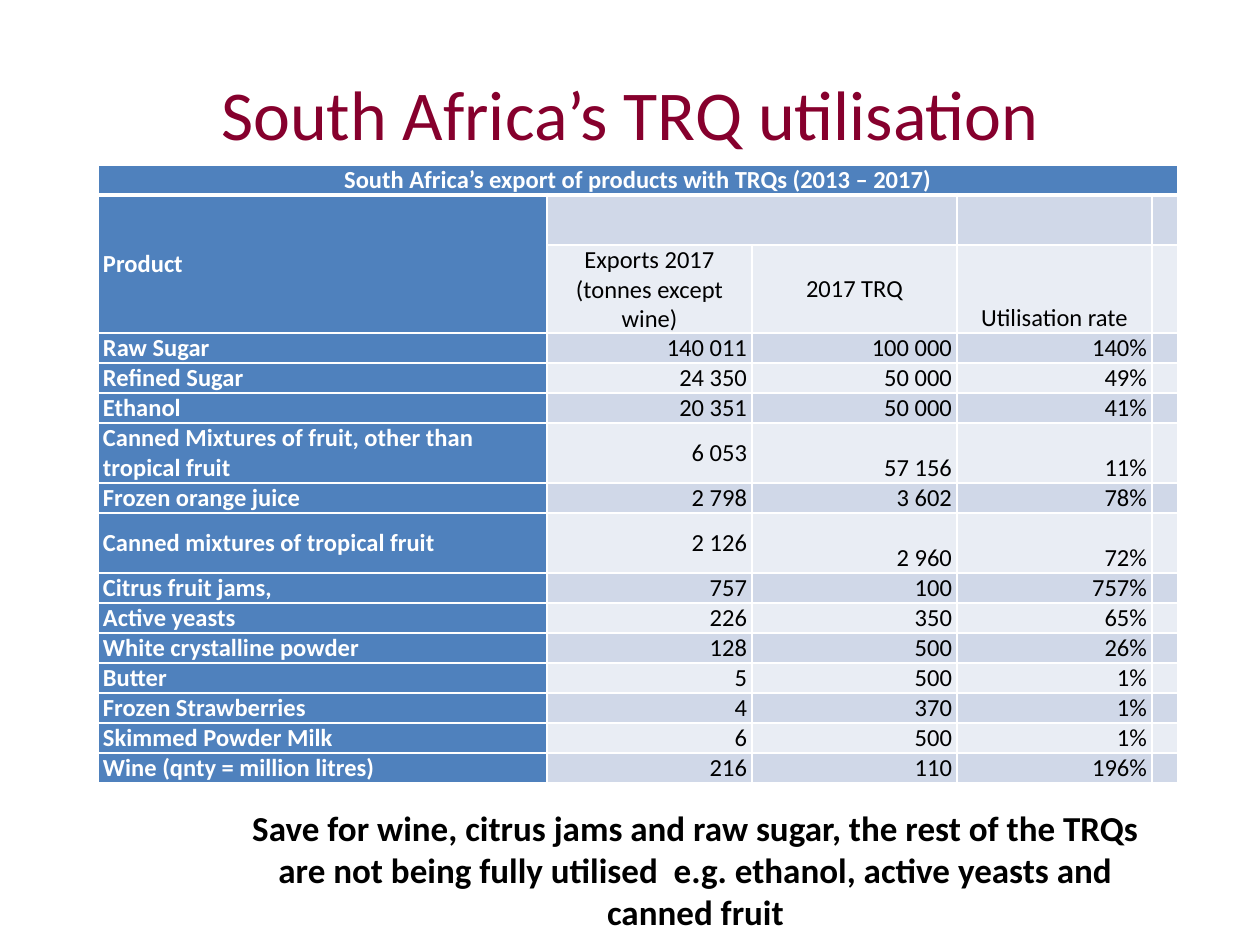
from typing import NamedTuple

import lxml.etree
import pptx
import pptx.dml.color
import pptx.enum.text
import pptx.oxml.ns
import pptx.util

EMU_PER_PX = 914400 / 126
FONT = "Calibri"
BLUE, PALE_BLUE, PALEST_BLUE = "4F81BD", "D0D8E8", "E9EDF4"
WHITE, BLACK, MAROON = "FFFFFF", "000000", "86002D"
LEFT, CENTER, RIGHT = (getattr(pptx.enum.text.PP_ALIGN, n) for n in ("LEFT", "CENTER", "RIGHT"))
TOP, MIDDLE, BOTTOM = (getattr(pptx.enum.text.MSO_ANCHOR, n) for n in ("TOP", "MIDDLE", "BOTTOM"))

COLUMN_WIDTHS = [449, 205, 205, 195, 26]
HEADING_HEIGHTS = [30, 50, 60]
ROW_HEIGHT = 30


class Product(NamedTuple):
    name: str
    exports: int
    quota: int
    lines: int = 1


PRODUCTS = [
    Product("Raw Sugar", 140011, 100000),
    Product("Refined Sugar", 24350, 50000),
    Product("Ethanol", 20351, 50000),
    Product("Canned Mixtures of fruit, other than tropical fruit", 6053, 57156, 2),
    Product("Frozen orange juice", 2798, 3602),
    Product("Canned mixtures of tropical fruit", 2126, 2960, 2),
    Product("Citrus fruit jams,", 757, 100),
    Product("Active yeasts", 226, 350),
    Product("White crystalline powder", 128, 500),
    Product("Butter", 5, 500),
    Product("Frozen Strawberries", 4, 370),
    Product("Skimmed Powder Milk", 6, 500),
    Product("Wine (qnty = million litres)", 216, 110),
]


def px(length: int) -> pptx.util.Emu:
    return pptx.util.Emu(round(length * EMU_PER_PX))


def rgb(color: str) -> pptx.dml.color.RGBColor:
    return pptx.dml.color.RGBColor.from_string(color)


def write(frame, text: str, *, size: int = 14, color: str = BLACK,
          bold: bool = False, align=LEFT) -> None:
    paragraph = frame.paragraphs[0]
    paragraph.alignment = align
    run = paragraph.add_run()
    run.text = text
    run.font.name = FONT
    run.font.size = pptx.util.Pt(size)
    run.font.bold = bold
    run.font.color.rgb = rgb(color)


def add_text(slide, left: int, top: int, width: int, height: int, text: str,
             anchor=TOP, **text_format) -> None:
    frame = slide.shapes.add_textbox(px(left), px(top), px(width), px(height)).text_frame
    frame.word_wrap = True
    frame.vertical_anchor = anchor
    write(frame, text, align=CENTER, **text_format)


def add_border(cell, side: str, points: int) -> None:
    line = lxml.etree.SubElement(cell._tc.get_or_add_tcPr(), pptx.oxml.ns.qn(f"a:ln{side}"),
                                 w=str(pptx.util.Pt(points)))
    fill = lxml.etree.SubElement(line, pptx.oxml.ns.qn("a:solidFill"))
    lxml.etree.SubElement(fill, pptx.oxml.ns.qn("a:srgbClr"), val=WHITE)


def style_cell(cell, row: int, column: int) -> None:
    cell.margin_left = cell.margin_right = px(5)
    cell.margin_top = cell.margin_bottom = 0
    thick_side = {0: "B", 1: "T"}.get(row)
    for side in "LRTB":
        add_border(cell, side, 3 if side == thick_side else 1)
    cell.fill.solid()
    band = PALE_BLUE if row % 2 else PALEST_BLUE
    cell.fill.fore_color.rgb = rgb(BLUE if row == 0 or column == 0 else band)
    # Empty cells keep the text size of the table, so rows stay low
    paragraph = cell.text_frame.paragraphs[0]._p
    lxml.etree.SubElement(paragraph, pptx.oxml.ns.qn("a:endParaRPr"), sz="1400")


def fill_cell(cell, text: str, anchor=MIDDLE, **text_format) -> None:
    cell.vertical_anchor = anchor
    write(cell.text_frame, text, **text_format)


def add_quota_table(slide) -> None:
    heights = HEADING_HEIGHTS + [ROW_HEIGHT * product.lines for product in PRODUCTS]
    table = slide.shapes.add_table(len(heights), len(COLUMN_WIDTHS), px(98), px(165),
                                   px(sum(COLUMN_WIDTHS)), px(sum(heights))).table
    table.horz_banding = False
    for column, width in zip(table.columns, COLUMN_WIDTHS):
        column.width = px(width)
    for row, height in enumerate(heights):
        table.rows[row].height = px(height)
        for column in range(len(COLUMN_WIDTHS)):
            style_cell(table.cell(row, column), row, column)

    # Headings
    table.cell(0, 0).merge(table.cell(0, 4))
    table.cell(1, 0).merge(table.cell(2, 0))
    table.cell(1, 1).merge(table.cell(1, 2))
    fill_cell(table.cell(0, 0), "South Africa’s export of products with TRQs (2013 – 2017)",
              color=WHITE, bold=True, align=CENTER)
    fill_cell(table.cell(1, 0), "Product", color=WHITE, bold=True)
    fill_cell(table.cell(2, 1), "Exports 2017 (tonnes except wine)", align=CENTER)
    fill_cell(table.cell(2, 2), "2017 TRQ", align=CENTER)
    fill_cell(table.cell(2, 3), "Utilisation rate", BOTTOM, align=CENTER)

    # Products, with the rate worked out from exports and quota
    no_break_space = chr(160)
    for row, product in enumerate(PRODUCTS, len(HEADING_HEIGHTS)):
        fill_cell(table.cell(row, 0), product.name, color=WHITE, bold=True)
        anchor = MIDDLE if product is PRODUCTS[-1] else BOTTOM
        exports, quota = (f"{amount:,}".replace(",", no_break_space)
                          for amount in (product.exports, product.quota))
        fill_cell(table.cell(row, 1), exports, align=RIGHT)
        fill_cell(table.cell(row, 2), quota, anchor, align=RIGHT)
        fill_cell(table.cell(row, 3), f"{product.exports / product.quota:.0%}",
                  anchor, align=RIGHT)


def main() -> None:
    presentation = pptx.Presentation()
    presentation.slide_width, presentation.slide_height = px(1260), px(945)
    slide = presentation.slides.add_slide(presentation.slide_layouts[6])

    # Title
    add_text(slide, 59, 38, 1142, 149, "South Africa’s TRQ utilisation",
             MIDDLE, size=40, color=MAROON)
    # Conclusion
    add_text(slide, 213, 800, 965, 140,
             "Save for wine, citrus jams and raw sugar, the rest of the TRQs are not being "
             "fully utilised  e.g. ethanol, active yeasts and canned fruit",
             size=20, bold=True)
    # Exports against quotas
    add_quota_table(slide)

    presentation.save("out.pptx")


if __name__ == "__main__":
    main()
